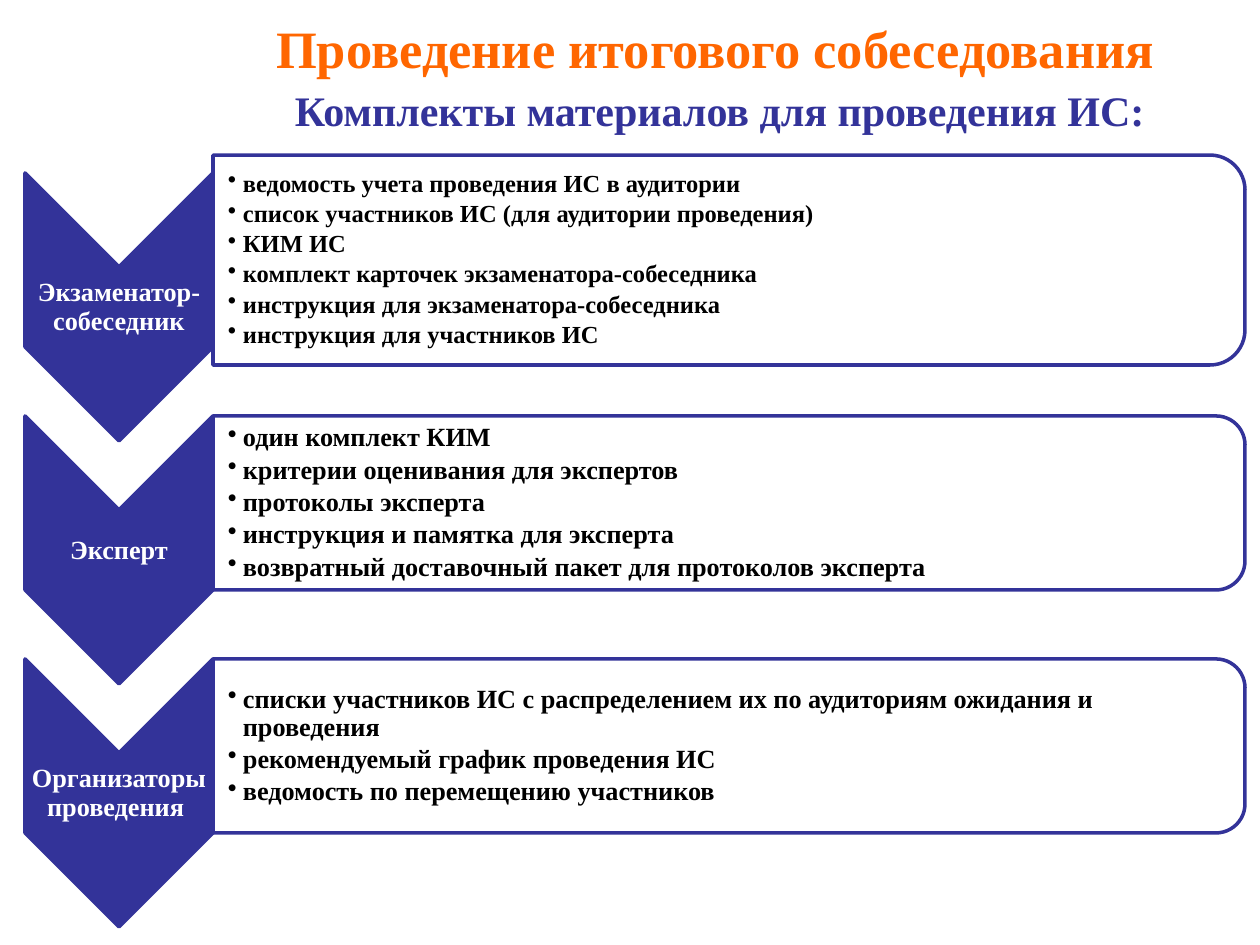
import lxml.etree
import pptx
import pptx.dml.color
import pptx.enum.shapes
import pptx.enum.text
import pptx.oxml.ns
import pptx.util

PX = 914400 // 126
SHAPE = pptx.enum.shapes.MSO_SHAPE
ALIGN = pptx.enum.text.PP_ALIGN
ANCHOR = pptx.enum.text.MSO_ANCHOR
COLORS = {"indigo": "333399", "orange": "FF6600", "white": "FFFFFF", "black": "000000"}

# Rows: label, bullet size, panel height, bullet lines
ROWS = [
    ("Экзаменатор-собеседник", 14, 210, [
        "ведомость учета проведения ИС в аудитории",
        "список участников ИС (для аудитории проведения)",
        "КИМ ИС",
        "комплект карточек экзаменатора-собеседника",
        "инструкция для экзаменатора-собеседника",
        "инструкция для участников ИС"]),
    ("Эксперт", 15, 174, [
        "один комплект КИМ",
        "критерии оценивания для экспертов",
        "протоколы эксперта",
        "инструкция и памятка для эксперта",
        "возвратный доставочный пакет для протоколов эксперта"]),
    ("Организаторы проведения ", 15, 174, [
        "списки участников ИС с распределением их по аудиториям ожидания и проведения",
        "рекомендуемый график проведения ИС",
        "ведомость по перемещению участников"]),
]
ROW_TOP, ROW_PITCH = 173, 243
CHEVRON_LEFT, CHEVRON_WIDTH, CHEVRON_HEIGHT = 25, 188, 268
PANEL_LEFT, PANEL_WIDTH = 213, 1032
PANEL_MIDDLE = 87


def px(*lengths):
    return [length * PX for length in lengths]


def rgb(name):
    return pptx.dml.color.RGBColor.from_string(COLORS[name])


def sub(parent, tag, **attributes):
    return lxml.etree.SubElement(parent, pptx.oxml.ns.qn(tag), **attributes)


def add_turned_shape(page, kind, left, top, width, height, fill):
    """Add a shape turned by 90 degrees that covers the given area."""
    shift = (width - height) // 2
    shape = page.shapes.add_shape(kind, *px(left + shift, top - shift, height, width))
    shape.rotation = 90
    shape.shadow.inherit = False
    shape.fill.solid()
    shape.fill.fore_color.rgb = rgb(fill)
    shape.line.color.rgb = rgb("indigo")
    shape.line.width = pptx.util.Pt(2)
    return shape


def add_text(page, area, lines, size, color, insets=(1, 1, 1, 1), align=ALIGN.LEFT,
             anchor=ANCHOR.MIDDLE, bullets=False, spacing=1.0, after=0):
    box = page.shapes.add_textbox(*px(*area))
    frame = box.text_frame
    left, top, right, bottom = px(*insets)
    frame_format = {"word_wrap": True, "vertical_anchor": anchor, "margin_left": left,
                    "margin_top": top, "margin_right": right, "margin_bottom": bottom}
    for name, value in frame_format.items():
        setattr(frame, name, value)
    font_format = {"name": "Times New Roman", "size": pptx.util.Pt(size), "bold": True}
    for index, line in enumerate(lines):
        para = frame.add_paragraph() if index else frame.paragraphs[0]
        para.alignment = align
        para.line_spacing = spacing
        para.space_after = pptx.util.Pt(after)
        if bullets:
            add_bullet(para)
        span = para.add_run()
        span.text = line
        for name, value in font_format.items():
            setattr(span.font, name, value)
        span.font.color.rgb = rgb(color)


def add_bullet(para):
    properties = para._p.get_or_add_pPr()
    indent = 15 * PX
    properties.set("marL", str(indent))
    properties.set("indent", str(-indent))
    sub(properties, "a:buChar", char="•")


def add_row(page, top, label, size, height, lines):
    # Chevron and its label
    add_turned_shape(page, SHAPE.CHEVRON, CHEVRON_LEFT, top,
                     CHEVRON_WIDTH, CHEVRON_HEIGHT, "indigo")
    add_text(page, (CHEVRON_LEFT, top + 94, CHEVRON_WIDTH, 81), [label], 15, "white",
             align=ALIGN.CENTER, spacing=0.9)
    # Panel, slightly see-through, and its bullets
    panel_top = top + PANEL_MIDDLE - height // 2
    panel = add_turned_shape(page, SHAPE.ROUND_2_SAME_RECTANGLE, PANEL_LEFT, panel_top,
                             PANEL_WIDTH, height, "white")
    color = panel._element.spPr.find(".//" + pptx.oxml.ns.qn("a:srgbClr"))
    sub(color, "a:alpha", val="90000")
    add_text(page, (PANEL_LEFT, panel_top + 9, PANEL_WIDTH - 9, height - 18), lines, size,
             "black", insets=(15, 1, 1, 1), bullets=True, spacing=0.9, after=size * 0.15)


def main():
    deck = pptx.Presentation()
    deck.slide_width = pptx.util.Inches(10)
    deck.slide_height = pptx.util.Inches(7.5)
    page = deck.slides.add_slide(deck.slide_layouts[6])

    # Headings
    add_text(page, (144, -16, 1143, 127), ["Проведение итогового собеседования"], 30,
             "orange", insets=(13, 6, 13, 6), align=ALIGN.CENTER)
    # Rows
    for index, row in enumerate(ROWS):
        add_row(page, ROW_TOP + index * ROW_PITCH, *row)
    add_text(page, (282, 79, 963, 63), ["Комплекты материалов для проведения ИС:"], 24,
             "indigo", insets=(13, 6, 13, 6), anchor=ANCHOR.TOP)

    deck.save("out.pptx")


if __name__ == "__main__":
    main()
